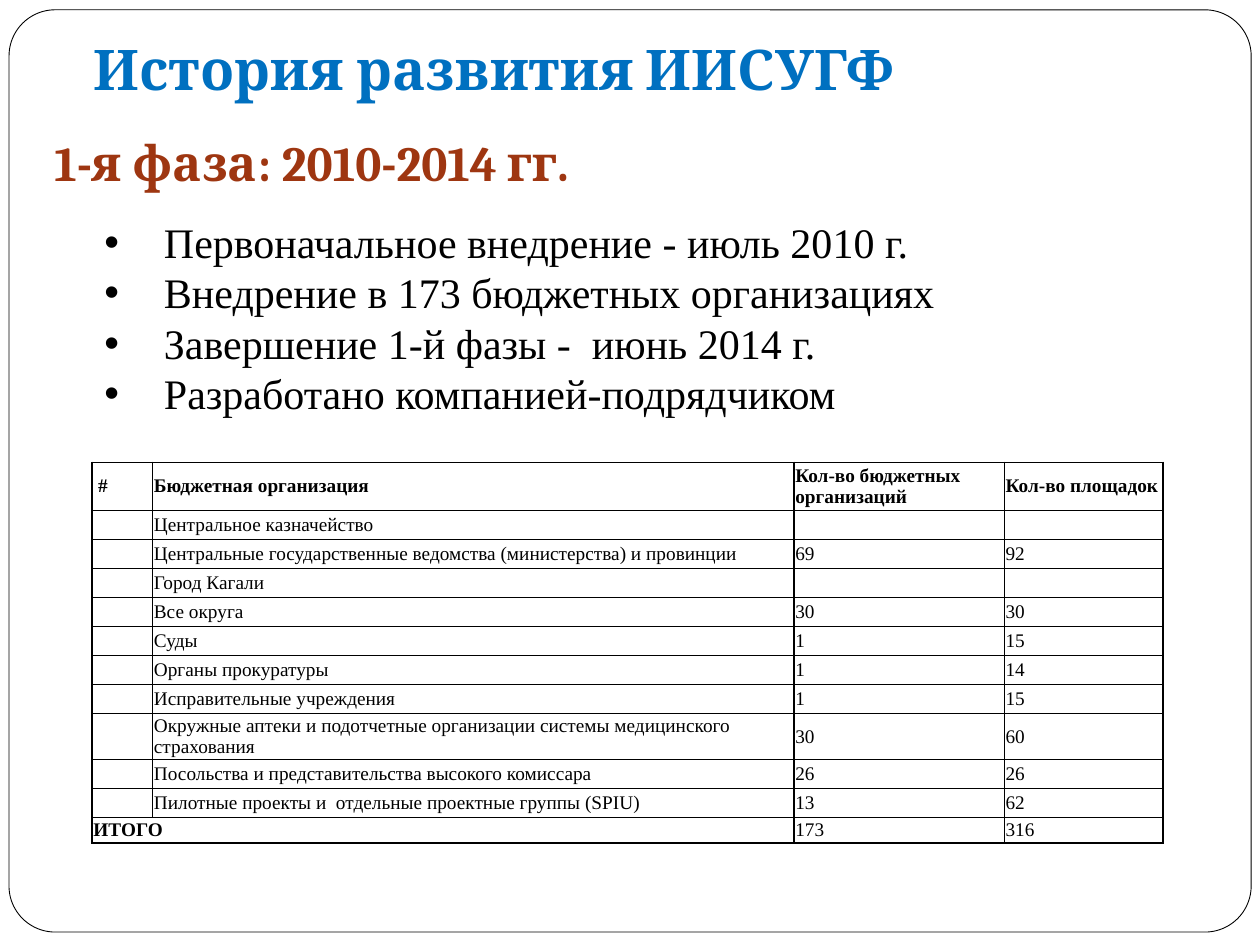
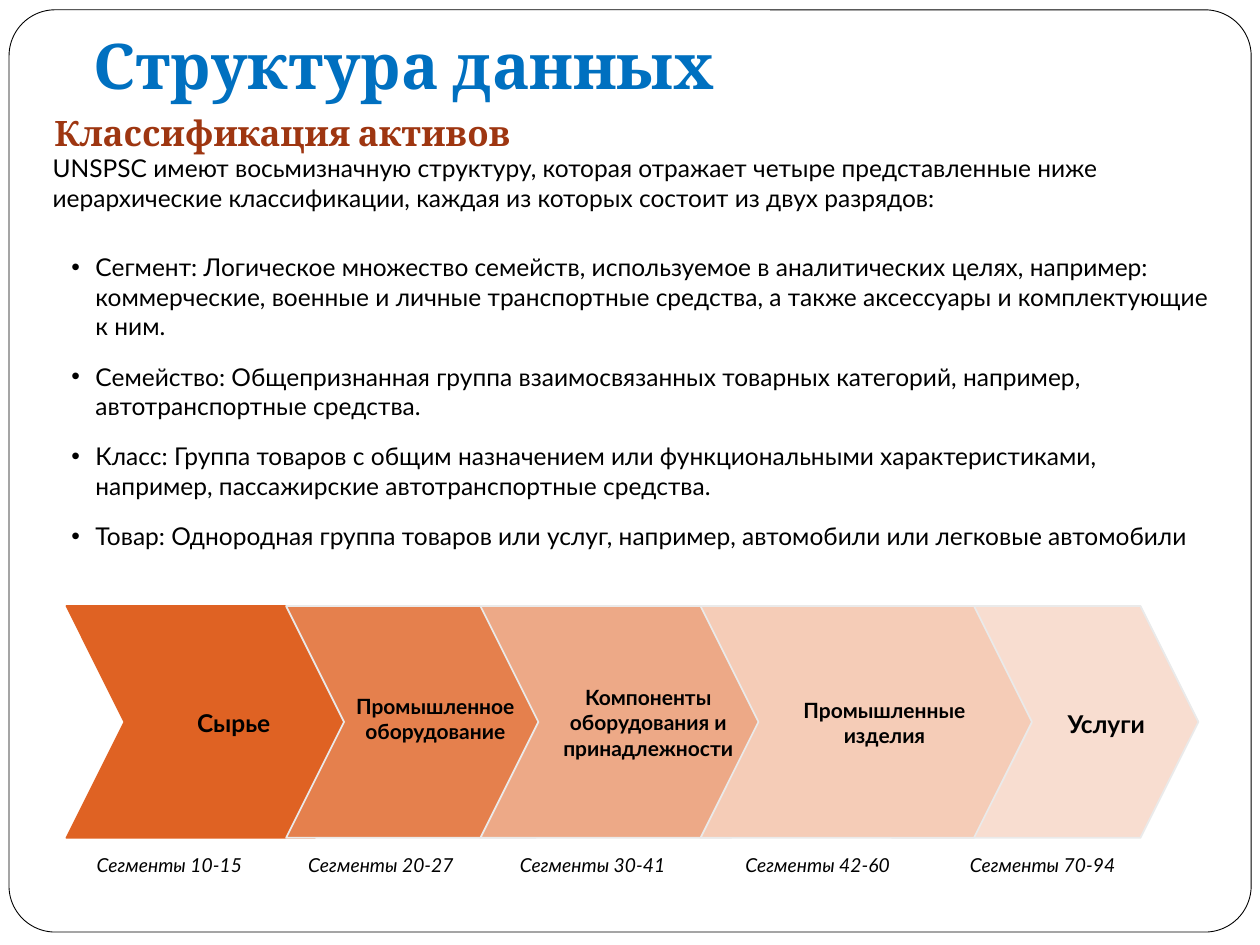
from dataclasses import dataclass
from typing import Any, NamedTuple

from pptx import Presentation
from pptx.dml.color import RGBColor
from pptx.enum.shapes import MSO_SHAPE as Preset
from pptx.enum.text import MSO_ANCHOR as Anchor, MSO_AUTO_SIZE as AutoSize, PP_ALIGN as Align
from pptx.oxml import parse_xml
from pptx.oxml.ns import nsdecls
from pptx.oxml.xmlchemy import OxmlElement
from pptx.util import Pt


@dataclass(frozen=True)
class Theme:
    """Colours, fonts and type sizes of the presentation."""

    black: RGBColor = RGBColor.from_string("000000")
    white: RGBColor = RGBColor.from_string("FFFFFF")
    blue: RGBColor = RGBColor.from_string("0070C0")
    rust: RGBColor = RGBColor.from_string("9E3611")
    outline: RGBColor = RGBColor.from_string("EAEAEA")
    heading_font: str = "Cambria"
    serif_font: str = "Times New Roman"
    sans_font: str = "Lato"
    history_title: int = 32
    data_title: int = 36
    phase: int = 28
    classification: int = 20
    history: int = 24
    body: int = 14
    step: int = 12
    small: int = 11


THEME = Theme()


class Box(NamedTuple):
    """Left, top, width and height in points."""

    left: float
    top: float
    width: float
    height: float

    def lengths(self) -> list[int]:
        """Return the four lengths for python-pptx."""
        return [Pt(value) for value in self]


class Bullet(NamedTuple):
    """Indent of a bulleted paragraph in points."""

    margin: float
    hanging: float


class Style(NamedTuple):
    """Look of a paragraph."""

    font: str
    size: float
    color: RGBColor = THEME.black
    bold: bool = False
    italic: bool = False
    align: Align = Align.LEFT
    before: float = 0
    after: float = 0
    bullet: Bullet | None = None


class Step(NamedTuple):
    """One chevron with its label and segment caption."""

    label: str
    segments: str
    left: float
    width: float
    fill: str
    label_box: Box
    label_size: int
    caption_left: float
    caption_width: float


TITLE_BOX = Box(46, 21, 612, 44.6)
FRAME_BOX = Box(5.2, 5.6, 709.8, 527)
HISTORY = Style(THEME.serif_font, THEME.history, bullet=Bullet(34, 34))
INTRO = Style(THEME.sans_font, THEME.body, after=16.8)
LEVEL = Style(THEME.sans_font, THEME.body, before=6, after=6, bullet=Bullet(24.5, 13.7))
CELL = Style(THEME.serif_font, THEME.small)
CAPTION = Style(THEME.sans_font, THEME.small, italic=True, align=Align.CENTER)

HISTORY_POINTS = [
    "Первоначальное внедрение - июль 2010 г.",
    "Внедрение в 173 бюджетных организациях",
    "Завершение 1-й фазы -  июнь 2014 г.",
    "Разработано компанией-подрядчиком",
]
COLUMN_WIDTHS = [34.6, 366.5, 120.2, 90.7]
HEADER_HEIGHT, ROW_HEIGHT, TALL_HEIGHT, TOTAL_HEIGHT = 27.6, 16.6, 26.2, 14.4
TALL_ROW = 8
ORGANIZATIONS = [
    (" #", "Бюджетная организация", "Кол-во бюджетных организаций", "Кол-во площадок"),
    ("", "Центральное казначейство", "", ""),
    ("", "Центральные государственные ведомства (министерства) и провинции", "69", "92"),
    ("", "Город Кагали", "", ""),
    ("", "Все округа", "30", "30"),
    ("", "Суды", "1", "15"),
    ("", "Органы прокуратуры", "1", "14"),
    ("", "Исправительные учреждения", "1", "15"),
    ("", "Окружные аптеки и подотчетные организации системы медицинского страхования", "30", "60"),
    ("", "Посольства и представительства высокого комиссара", "26", "26"),
    ("", "Пилотные проекты и  отдельные проектные группы (SPIU)", "13", "62"),
    ("ИТОГО", "", "173", "316"),
]

UNSPSC_INTRO = (
    "UNSPSC имеют восьмизначную структуру, которая отражает четыре представленные ниже "
    "иерархические классификации, каждая из которых состоит из двух разрядов:"
)
UNSPSC_LEVELS = [
    "Сегмент: Логическое множество семейств, используемое в аналитических целях, например: "
    "коммерческие, военные и личные транспортные средства, а также аксессуары и комплектующие к ним.",
    "Семейство: Общепризнанная группа взаимосвязанных товарных категорий, например, "
    "автотранспортные средства.",
    "Класс: Группа товаров с общим назначением или функциональными характеристиками, "
    "например, пассажирские автотранспортные средства.",
    "Товар: Однородная группа товаров или услуг, например, автомобили или легковые автомобили",
]
CHEVRON_TOP, CHEVRON_HEIGHT = 346.3, 132.5
CAPTION_TOP, CAPTION_HEIGHT = 483.8, 21
STEPS = [
    Step("Сырье", "10-15", 38, 175, "DF6223",
         Box(82.8, 382.3, 101.5, 61.2), THEME.body, 43.9, 105.8),
    Step("Промышленное оборудование", "20-27", 163.5, 175.7, "E5804D",
         Box(180, 383.8, 137.5, 54), THEME.step, 163.4, 108.7),
    Step("Компоненты оборудования и принадлежности", "30-41", 274.5, 176.4, "EDA987",
         Box(301.7, 378.7, 137.5, 68.4), THEME.step, 282.2, 113),
    Step("Услуги", "70-94", 509.8, 175, "F8DDD0",
         Box(585.4, 377.3, 93.6, 72.7), THEME.body, 537.1, 117.4),
    Step("Промышленные изделия", "42-60", 400.3, 189.4, "F5CCB7",
         Box(431.3, 385.2, 148.3, 55.4), THEME.step, 406.1, 122.4),
]


def apply(target: Any, values: dict[str, Any]) -> None:
    """Set each named attribute on the target."""
    for name, value in values.items():
        setattr(target, name, value)


def format_paragraph(paragraph: Any, text: str, style: Style) -> None:
    """Write the text into a paragraph in the given style."""
    apply(paragraph, {"alignment": style.align, "space_before": Pt(style.before),
                      "space_after": Pt(style.after)})
    if style.bullet:
        properties = paragraph._p.get_or_add_pPr()
        properties.set("marL", str(Pt(style.bullet.margin)))
        properties.set("indent", str(-Pt(style.bullet.hanging)))
        properties.append(parse_xml(f'<a:buFont {nsdecls("a")} typeface="Arial"/>'))
        properties.append(parse_xml(f'<a:buChar {nsdecls("a")} char="•"/>'))
    if not text:
        end_properties = OxmlElement("a:endParaRPr")
        end_properties.set("sz", str(style.size * 100))
        paragraph._p.append(end_properties)
        return
    run = paragraph.add_run()
    run.text = text
    apply(run.font, {"name": style.font, "size": Pt(style.size), "bold": style.bold,
                     "italic": style.italic})
    run.font.color.rgb = style.color


def add_text(slide: Any, box: Box, entries: list[tuple[str, Style]],
             anchor: Anchor = Anchor.TOP) -> None:
    """Add a wrapped text box with one paragraph per entry."""
    frame = slide.shapes.add_textbox(*box.lengths()).text_frame
    apply(frame, {"word_wrap": True, "auto_size": AutoSize.NONE, "vertical_anchor": anchor})
    for index, (text, style) in enumerate(entries):
        paragraph = frame.add_paragraph() if index else frame.paragraphs[0]
        format_paragraph(paragraph, text, style)


def add_preset(slide: Any, preset: Preset, box: Box, adjustment: float, fill: RGBColor,
               line: RGBColor, line_width: float) -> Any:
    """Add a flat preset shape."""
    shape = slide.shapes.add_shape(preset, *box.lengths())
    shape.shadow.inherit = False
    shape.adjustments[0] = adjustment
    shape.fill.solid()
    shape.fill.fore_color.rgb = fill
    shape.line.color.rgb = line
    shape.line.width = Pt(line_width)
    return shape


def add_layout_frame(slide: Any) -> None:
    """Put the rounded page frame on the layout behind everything."""
    frame = add_preset(slide, Preset.ROUNDED_RECTANGLE, FRAME_BOX, 0.05,
                       THEME.white, THEME.black, 0.5)
    frame.element.nvSpPr.cNvPr.set("id", "20")
    slide.slide_layout.shapes.element.insert(2, frame.element)


def add_titled_slide(presentation: Any, title: str, size: int, subtitle: str,
                     subtitle_box: Box, subtitle_size: int) -> Any:
    """Add a slide with its title and subtitle."""
    slide = presentation.slides.add_slide(presentation.slide_layouts[5])
    placeholder = slide.shapes.title
    apply(placeholder, dict(zip(("left", "top", "width", "height"), TITLE_BOX.lengths())))
    frame = placeholder.text_frame
    apply(frame, {"auto_size": AutoSize.NONE, "word_wrap": True,
                  "vertical_anchor": Anchor.BOTTOM, "margin_bottom": Pt(7.2)})
    format_paragraph(frame.paragraphs[0], title,
                     Style(THEME.heading_font, size, THEME.blue, bold=True))
    add_text(slide, subtitle_box,
             [(subtitle, Style(THEME.heading_font, subtitle_size, THEME.rust, bold=True))])
    return slide


def format_cell(cell: Any, text: str, bold: bool) -> None:
    """Fill a table cell with text and draw its borders."""
    apply(cell, {"vertical_anchor": Anchor.MIDDLE, "margin_left": Pt(0.7),
                 "margin_right": Pt(0.7), "margin_top": 0, "margin_bottom": 0})
    format_paragraph(cell.text_frame.paragraphs[0], text, CELL._replace(bold=bold))
    cell.fill.background()
    properties = cell._tc.get_or_add_tcPr()
    for index, side in enumerate("LRTB"):
        properties.insert(index, parse_xml(
            f'<a:ln{side} {nsdecls("a")} w="{Pt(1)}"><a:solidFill>'
            f'<a:srgbClr val="{THEME.black}"/></a:solidFill></a:ln{side}>'))


def add_organization_table(slide: Any) -> None:
    """Add the table of budget organizations."""
    last = len(ORGANIZATIONS) - 1
    heights = {0: HEADER_HEIGHT, TALL_ROW: TALL_HEIGHT, last: TOTAL_HEIGHT}
    box = Box(52.7, 264.2, sum(COLUMN_WIDTHS), 217)
    table = slide.shapes.add_table(last + 1, len(COLUMN_WIDTHS), *box.lengths()).table
    apply(table, {"first_row": False, "horz_banding": False})
    for column, width in zip(table.columns, COLUMN_WIDTHS):
        column.width = Pt(width)
    for row_index, values in enumerate(ORGANIZATIONS):
        table.rows[row_index].height = Pt(heights.get(row_index, ROW_HEIGHT))
        for column_index, text in enumerate(values):
            bold = row_index == 0 or (row_index == last and column_index == 0)
            format_cell(table.cell(row_index, column_index), text, bold)
    table.cell(last, 0).merge(table.cell(last, 1))


def add_step(slide: Any, step: Step, first: bool) -> None:
    """Add a chevron with its label and caption."""
    fill = RGBColor.from_string(step.fill)
    add_preset(slide, Preset.CHEVRON, Box(step.left, CHEVRON_TOP, step.width, CHEVRON_HEIGHT),
               0.25, fill, fill if first else THEME.outline, 1)
    label = Style(THEME.sans_font, step.label_size, bold=True, align=Align.CENTER)
    add_text(slide, step.label_box, [(step.label, label)], Anchor.MIDDLE)
    add_text(slide, Box(step.caption_left, CAPTION_TOP, step.caption_width, CAPTION_HEIGHT),
             [(f"Сегменты {step.segments}", CAPTION)])


def build_history(presentation: Any) -> None:
    """Build the slide on the history of the system."""
    slide = add_titled_slide(presentation, "История развития ИИСУГФ", THEME.history_title,
                             "1-я фаза: 2010-2014 гг.", Box(24, 72, 678, 41), THEME.phase)
    add_layout_frame(slide)
    add_text(slide, Box(52.6, 120.2, 615.6, 123.8), [(text, HISTORY) for text in HISTORY_POINTS])
    add_organization_table(slide)


def build_data_structure(presentation: Any) -> None:
    """Build the slide on the classification of assets."""
    slide = add_titled_slide(presentation, "Структура данных", THEME.data_title,
                             "Классификация активов", Box(24, 60, 678, 32), THEME.classification)
    for index, step in enumerate(STEPS):
        add_step(slide, step, index == 0)
    add_text(slide, Box(23, 84.2, 679, 236),
             [(UNSPSC_INTRO, INTRO)] + [(text, LEVEL) for text in UNSPSC_LEVELS])


def main() -> None:
    """Build and save the presentation."""
    presentation = Presentation()
    apply(presentation, {"slide_width": Pt(720), "slide_height": Pt(540)})
    build_history(presentation)
    build_data_structure(presentation)
    presentation.save("out.pptx")


if __name__ == "__main__":
    main()
